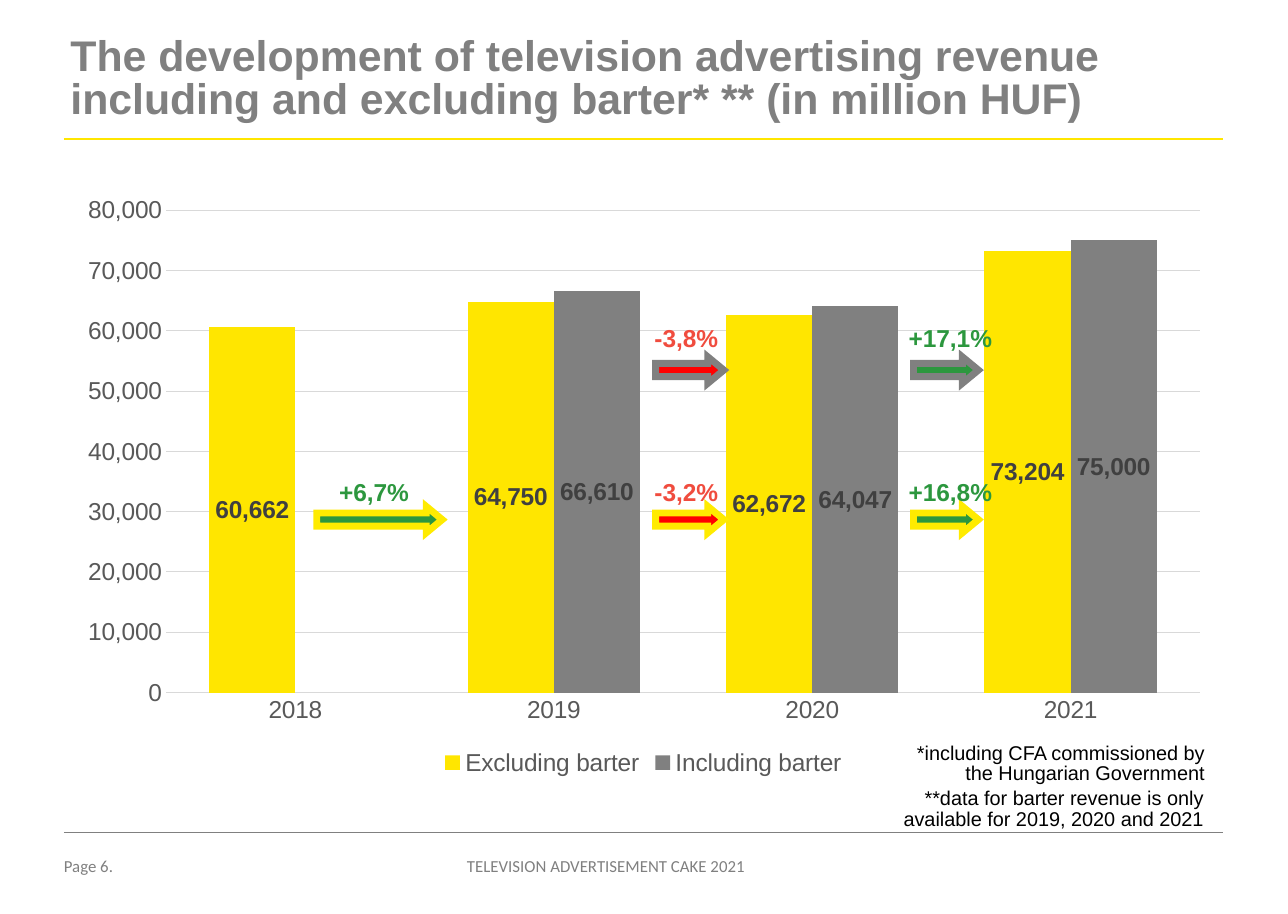
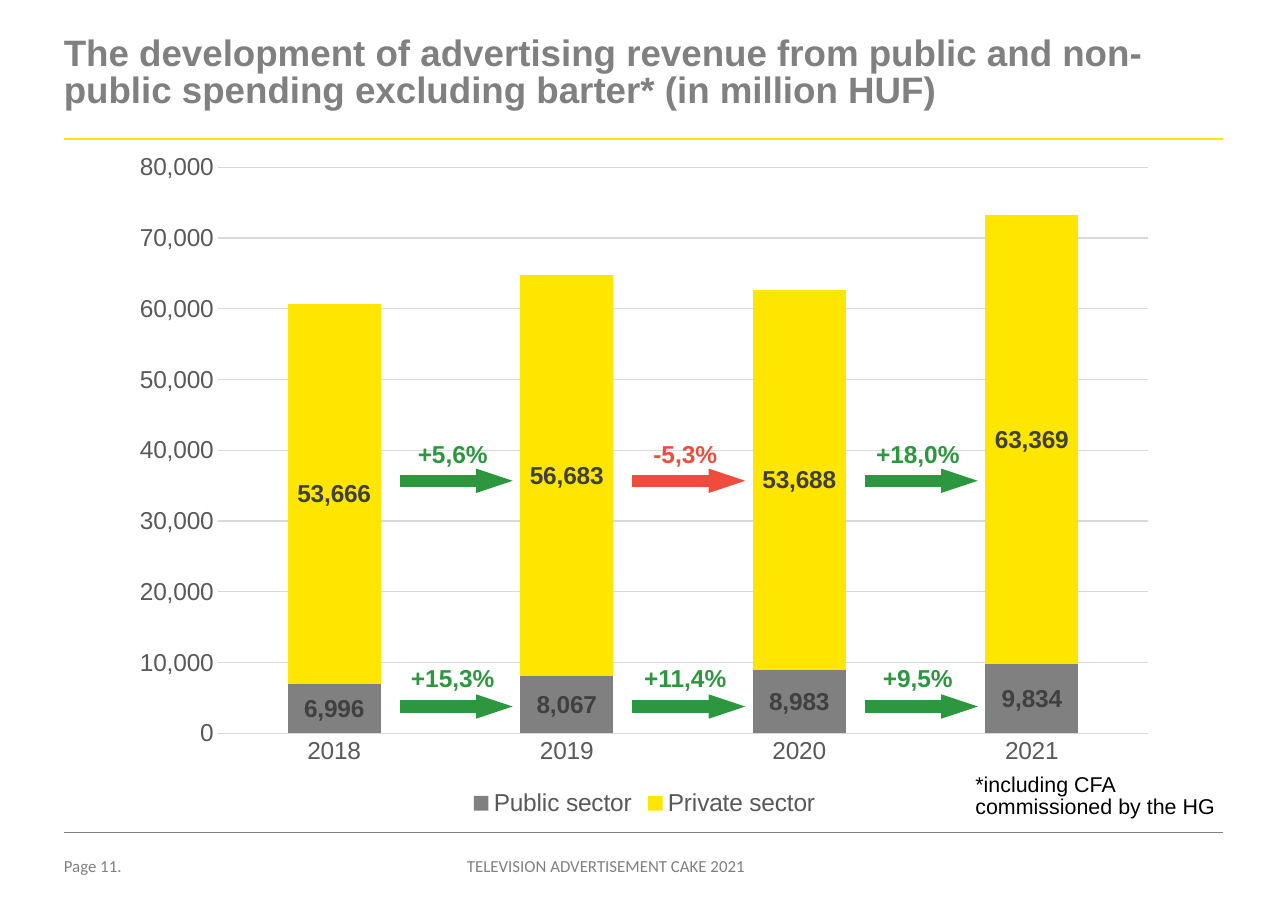
from collections import namedtuple

from lxml import etree
from pptx import Presentation
from pptx import util as u
from pptx.chart.data import CategoryChartData
from pptx.dml.color import RGBColor
from pptx.enum import chart as ch, shapes, text
from pptx.oxml import parse_xml
from pptx.oxml.ns import nsdecls, qn

Box = namedtuple("Box", "x y w h")
Column = namedtuple("Column", "shift width label_shift")
Row = namedtuple("Row", "value label_gap color changes")

W, H = 11.7, 8.3
MARGIN, BODY_W = 0.58, 10.53
YELLOW, GRAY, BLACK = "FFE600", "808080", "000000"
ARROW_YELLOW = "FFEB00"
GREEN, CORAL, RED = "2C973E", "F04C3E", "FF0000"
AXIS_TEXT, LABEL_TEXT, GRID = "595959", "404040", "D9D9D9"
YEARS = ["2018", "2019", "2020", "2021"]
AXIS_MAX, AXIS_STEP = 80000, 10000


def rgb(value):
    return RGBColor.from_string(value)


def set_font(font, size, color, bold=False, name="Arial"):
    font.size, font.bold, font.name = u.Pt(size), bold, name
    font.color.rgb = rgb(color)


def add_text(s, box, words, size, color, bold=False, name="Arial",
             align="LEFT", anchor="TOP", spacing=1, top=0, wrap=True):
    sp = s.shapes.add_textbox(*map(u.Inches, box))
    tf = sp.text_frame
    tf.word_wrap = wrap
    tf.margin_left = tf.margin_right = tf.margin_bottom = 0
    tf.margin_top = u.Inches(top)
    tf.vertical_anchor = getattr(text.MSO_ANCHOR, anchor)
    p = tf.paragraphs[0]
    p.alignment = getattr(text.PP_ALIGN, align)
    p.line_spacing = spacing
    r = p.add_run()
    r.text = words
    set_font(r.font, size, color, bold, name)


def add_line(s, x1, x2, y, color, width):
    ln = s.shapes.add_connector(shapes.MSO_CONNECTOR.STRAIGHT,
                                *map(u.Inches, (x1, y, x2, y)))
    ln.line.color.rgb = rgb(color)
    ln.line.width = u.Pt(width)
    etree.SubElement(ln._element.spPr, qn("a:effectLst"))
    return ln


def add_frame(prs, title, title_x, title_size, page):
    s = prs.slides.add_slide(prs.slide_layouts[6])
    right = MARGIN + BODY_W
    add_line(s, MARGIN, right, 1.26, YELLOW, 1.5)
    add_line(s, MARGIN, right, 7.56, GRAY, 0.25)
    add_text(s, Box(title_x, 0.33, BODY_W, 0.94), title, title_size, GRAY,
             bold=True, spacing=0.85)
    for box, words, align in (
            (Box(MARGIN, 7.77, 0.85, 0.24), f"Page {page}.", "LEFT"),
            (Box(3.31, 7.77, 4.39, 0.24),
             "TELEVISION ADVERTISEMENT CAKE 2021", "CENTER")):
        add_text(s, box, words, 11, GRAY, name="Calibri", align=align)
    return s


def add_note(s, box, words, size, align="LEFT"):
    add_text(s, box, words, size, BLACK, align=align, spacing=0.85, top=0.04)


def set_plot_area(chart, box, plot):
    shares = (("x", (plot.x - box.x) / box.w), ("y", (plot.y - box.y) / box.h),
              ("w", plot.w / box.w), ("h", plot.h / box.h))
    values = "".join(f'<c:{k} val="{v:.4f}"/>' for k, v in shares)
    area = chart._chartSpace.chart.plotArea
    for old in area.findall(qn("c:layout")):
        area.remove(old)
    area.insert(0, parse_xml(
        f'<c:layout {nsdecls("c")}><c:manualLayout>'
        '<c:layoutTarget val="inner"/><c:xMode val="edge"/>'
        f'<c:yMode val="edge"/>{values}</c:manualLayout></c:layout>'))


def add_columns(s, box, plot, kind, series, gap, overlap):
    data = CategoryChartData(number_format="#,##0")
    data.categories = YEARS
    for name, values, _ in series:
        data.add_series(name, values)
    chart = s.shapes.add_chart(getattr(ch.XL_CHART_TYPE, kind),
                               *map(u.Inches, box), data).chart
    set_font(chart.font, 16, AXIS_TEXT)
    chart.has_title = False
    chart.has_legend = True
    chart.legend.position = ch.XL_LEGEND_POSITION.BOTTOM
    chart.legend.include_in_layout = False
    set_font(chart.legend.font, 16, AXIS_TEXT)

    cat, val = chart.category_axis, chart.value_axis
    for axis in (cat, val):
        axis.major_tick_mark = axis.minor_tick_mark = ch.XL_TICK_MARK.NONE
        set_font(axis.tick_labels.font, 16, AXIS_TEXT)
    val.minimum_scale, val.maximum_scale = 0, AXIS_MAX
    val.major_unit = AXIS_STEP
    val.has_major_gridlines = True
    val.tick_labels.number_format = "#,##0"
    val.tick_labels.number_format_is_linked = False
    val.format.line.fill.background()
    for line in (cat.format.line, val.major_gridlines.format.line):
        line.color.rgb = rgb(GRID)
        line.width = u.Pt(0.75)

    bars = chart.plots[0]
    bars.gap_width, bars.overlap = gap, overlap
    bars.vary_by_categories = False
    for ser, (_, _, color) in zip(bars.series, series):
        ser.format.fill.solid()
        ser.format.fill.fore_color.rgb = rgb(color)
        labels = ser.data_labels
        labels.show_value = True
        labels.number_format = "#,##0"
        labels.number_format_is_linked = False
        labels.position = ch.XL_LABEL_POSITION.CENTER
        set_font(labels.font, 16, LABEL_TEXT, bold=True)
    set_plot_area(chart, box, plot)


def add_block_arrow(s, x, y, width, rising, outline):
    height = 0.24
    sp = s.shapes.add_shape(shapes.MSO_SHAPE.RIGHT_ARROW, *map(
        u.Inches, (x - width / 2, y - height / 2, width, height)))
    sp.adjustments[0], sp.adjustments[1] = 0.5, 0.606
    sp.shadow.inherit = False
    sp.fill.solid()
    sp.fill.fore_color.rgb = rgb(GREEN if rising else RED)
    sp.line.color.rgb = rgb(outline)
    sp.line.width = u.Pt(4.5)
    etree.SubElement(sp.line._get_or_add_ln(), qn("a:miter"), lim="800000")


def add_line_arrow(s, x, y, width, rising, _):
    ln = add_line(s, x - width / 2, x + width / 2, y,
                  GREEN if rising else CORAL, 8)
    props = ln.line._get_or_add_ln()
    props.set("cap", "sq")
    etree.SubElement(props, qn("a:tailEnd"), type="triangle", w="sm", len="med")


def add_changes(s, plot, columns, rows, draw_arrow):
    slot = plot.w / len(YEARS)
    for row in rows:
        y = plot.y + plot.h * (1 - row.value / AXIS_MAX)
        for i, (col, change) in enumerate(zip(columns, row.changes), 1):
            if not change:
                continue
            edge = plot.x + slot * i
            rising = change.startswith("+")
            draw_arrow(s, edge + col.shift, y, col.width, rising, row.color)
            label = Box(edge + col.label_shift - 0.55,
                        y - row.label_gap - 0.2, 1.1, 0.4)
            add_text(s, label, change, 16, GREEN if rising else CORAL,
                     bold=True, align="CENTER", anchor="MIDDLE", wrap=False)


def barter_slide(prs):
    s = add_frame(prs, "The development of television advertising revenue "
                  "including and excluding barter* ** (in million HUF)",
                  0.64, 28, 6)
    add_note(s, Box(8.25, 6.72, 2.69, 0.41),
             "*including CFA commissioned by the Hungarian Government",
             13, "RIGHT")
    add_note(s, Box(7.9, 7.13, 3.03, 0.41),
             "**data for barter revenue is only available for 2019, 2020 "
             "and 2021", 13, "RIGHT")
    plot = Box(1.51, 1.91, 9.39, 4.38)
    add_columns(s, Box(MARGIN, 1.69, BODY_W, 5.4), plot, "COLUMN_CLUSTERED", [
        ("Excluding barter", [60662, 64750, 62672, 73204], YELLOW),
        ("Including barter", [None, 66610, 64047, 75000], GRAY)], 100, 0)
    columns = [Column(-0.41, 1.14, -0.46), Column(0.06, 0.62, 0.03),
               Column(0.04, 0.59, 0.08)]
    add_changes(s, plot, columns, [
        Row(53500, 0.29, GRAY, [None, "-3,8%", "+17,1%"]),
        Row(28700, 0.25, ARROW_YELLOW, ["+6,7%", "-3,2%", "+16,8%"])],
        add_block_arrow)


def sector_slide(prs):
    s = add_frame(prs, "The development of advertising revenue from public "
                  "and non-public spending excluding barter* (in million HUF)",
                  MARGIN, 24, 11)
    add_note(s, Box(8.86, 7, 2.54, 0.44),
             "*including CFA commissioned by the HG", 14)
    plot = Box(1.98, 1.52, 8.45, 5.14)
    add_columns(s, Box(1.08, 1.28, 9.55, 6.18), plot, "COLUMN_STACKED", [
        ("Public sector", [6996, 8067, 8983, 9834], GRAY),
        ("Private sector", [53666, 56683, 53688, 63369], YELLOW)], 150, 100)
    add_changes(s, plot, [Column(0.08, 0.97, 0.02)] * 3, [
        Row(35700, 0.25, None, ["+5,6%", "-5,3%", "+18,0%"]),
        Row(3800, 0.26, None, ["+15,3%", "+11,4%", "+9,5%"])],
        add_line_arrow)


def main():
    prs = Presentation()
    prs.slide_width, prs.slide_height = u.Inches(W), u.Inches(H)
    barter_slide(prs)
    sector_slide(prs)
    prs.save("out.pptx")


if __name__ == "__main__":
    main()
